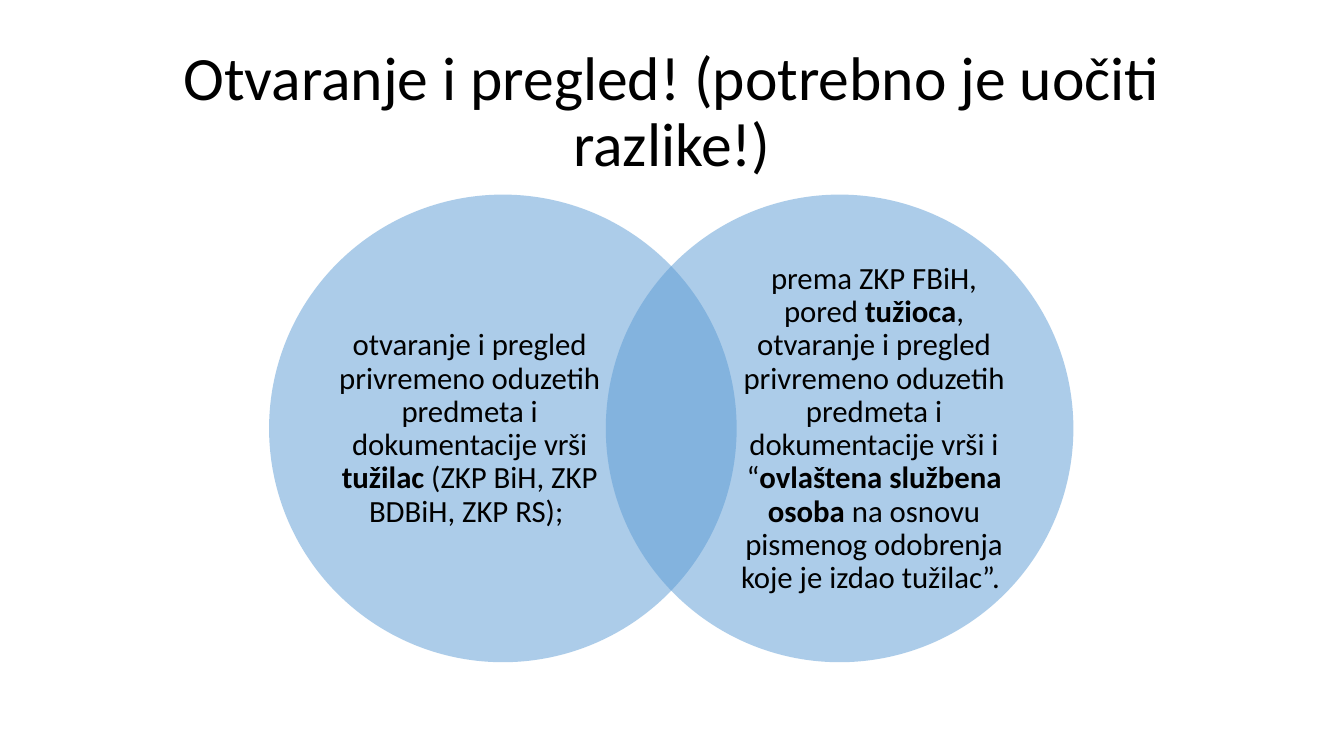
"""Build a slide with a two-circle Venn diagram comparing the rules on opening and inspection."""
from dataclasses import dataclass

from lxml.etree import SubElement
from pptx import Presentation
from pptx.dml.color import RGBColor
from pptx.enum.shapes import MSO_SHAPE as SHAPE
from pptx.enum.text import MSO_ANCHOR as ANCHOR, PP_ALIGN as ALIGN
from pptx.oxml.ns import qn
from pptx.slide import Slide
from pptx.util import Pt

FONT = "Calibri"
BLACK = "000000"
BLUE = "5B9BD5"
CIRCLE_TOP, DIAMETER = 139, 334
TEXT_TOP, TEXT_WIDTH, TEXT_HEIGHT = 178.6, 193, 255.6


@dataclass(frozen=True)
class Run:
    text: str
    bold: bool = False


@dataclass(frozen=True)
class Circle:
    left: float
    text_left: float
    runs: tuple[Run, ...]


TITLE = (Run("Otvaranje i pregled! (potrebno je uočiti razlike!)"),)
CIRCLES = (
    Circle(192.2, 239, (
        Run("otvaranje i pregled privremeno oduzetih predmeta i dokumentacije vrši "),
        Run("tužilac", True),
        Run(" (ZKP BiH, ZKP BDBiH, ZKP RS); "),
    )),
    Circle(432.7, 527.8, (
        Run("prema ZKP FBiH, pored "),
        Run("tužioca", True),
        Run(", otvaranje i pregled privremeno oduzetih predmeta i dokumentacije vrši i “"),
        Run("ovlaštena službena osoba ", True),
        Run("na osnovu pismenog odobrenja koje je izdao tužilac”. "),
    )),
)


def color(value: str) -> RGBColor:
    return RGBColor.from_string(value)


def add_text(s: Slide, left: float, top: float, width: float, height: float,
             runs: tuple[Run, ...], size: float, inset_x: float = 0, inset_y: float = 0) -> None:
    tf = s.shapes.add_textbox(Pt(left), Pt(top), Pt(width), Pt(height)).text_frame
    tf.word_wrap = True
    tf.vertical_anchor = ANCHOR.MIDDLE
    tf.margin_left = tf.margin_right = Pt(inset_x)
    tf.margin_top = tf.margin_bottom = Pt(inset_y)
    p = tf.paragraphs[0]
    p.alignment = ALIGN.CENTER
    p.line_spacing = 0.9
    for run in runs:
        r = p.add_run()
        r.text = run.text
        r.font.name = FONT
        r.font.size = Pt(size)
        r.font.bold = run.bold
        r.font.color.rgb = color(BLACK)


def add_circle(s: Slide, circle: Circle) -> None:
    sp = s.shapes.add_shape(SHAPE.OVAL, Pt(circle.left), Pt(CIRCLE_TOP), Pt(DIAMETER), Pt(DIAMETER))
    sp.shadow.inherit = False
    sp.fill.solid()
    sp.fill.fore_color.rgb = color(BLUE)
    sp.line.fill.background()
    fill = sp.fill._xPr.find(qn("a:solidFill"))
    SubElement(fill[0], qn("a:alpha"), val="50000")
    add_text(s, circle.text_left, TEXT_TOP, TEXT_WIDTH, TEXT_HEIGHT, circle.runs, 22)


def main() -> None:
    prs = Presentation()
    prs.slide_width, prs.slide_height = Pt(960), Pt(540)
    s = prs.slides.add_slide(prs.slide_layouts[6])
    add_text(s, 66, 28.8, 828, 104.4, TITLE, 44, 7.2, 3.6)
    for circle in CIRCLES:
        add_circle(s, circle)
    prs.save("out.pptx")


if __name__ == "__main__":
    main()
